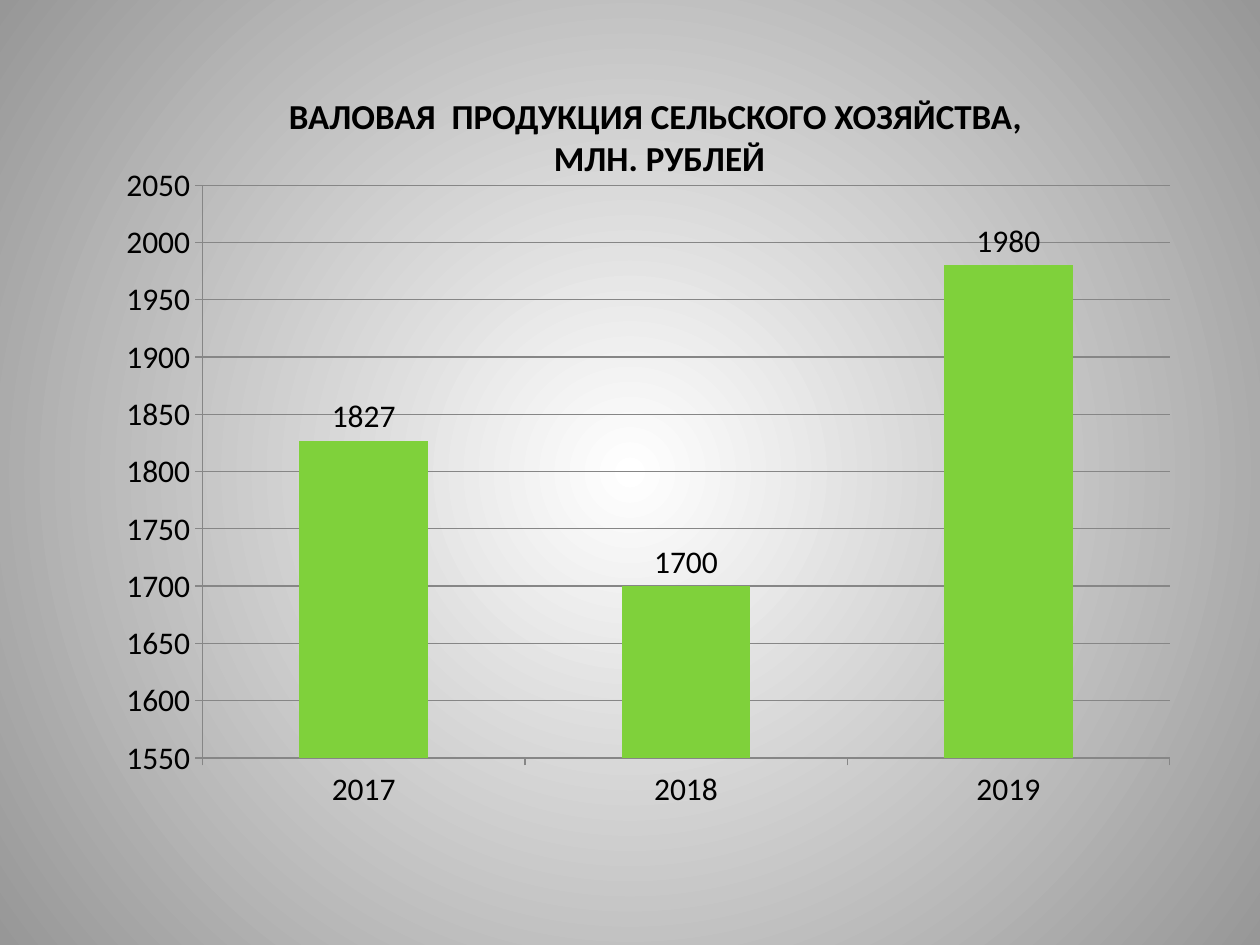
from dataclasses import dataclass

from lxml import etree
from pptx import Presentation
from pptx.chart.data import CategoryChartData
from pptx.dml.color import RGBColor
from pptx.enum.chart import XL_CHART_TYPE as ChartType
from pptx.enum.chart import XL_LABEL_POSITION as LabelPosition
from pptx.enum.chart import XL_TICK_MARK as TickMark
from pptx.enum.text import MSO_ANCHOR as Anchor
from pptx.enum.text import PP_ALIGN as Align
from pptx.oxml import parse_xml
from pptx.oxml.ns import nsdecls, qn
from pptx.util import Emu, Pt

PX_PER_INCH = 126
TITLE_LINES = ["ВАЛОВАЯ  ПРОДУКЦИЯ СЕЛЬСКОГО ХОЗЯЙСТВА, ", "МЛН. РУБЛЕЙ"]
OUTPUT_BY_YEAR = {"2017": 1827, "2018": 1700, "2019": 1980}


@dataclass(frozen=True)
class Theme:
    font: str = "Calibri"
    title_size: int = 20
    chart_size: int = 18
    text: str = "000000"
    bar: str = "7FD13B"
    grid: str = "868686"
    center: str = "FFFFFF"
    edge: str = "979797"


def px(length):
    return Emu(round(length * 914400 / PX_PER_INCH))


def set_attributes(target, values):
    for name, value in values.items():
        setattr(target, name, value)


class SlideBuilder:
    def __init__(self, slide, theme):
        self.slide = slide
        self.theme = theme

    def format_font(self, font, size, bold=False):
        set_attributes(font, {"name": self.theme.font, "size": Pt(size), "bold": bold})
        font.color.rgb = RGBColor.from_string(self.theme.text)

    def background(self):
        """Fill the background with a gradient spreading from the slide centre."""
        fill = self.slide.background.fill
        fill.gradient()
        for stop, color in zip(fill.gradient_stops, (self.theme.center, self.theme.edge)):
            stop.color.rgb = RGBColor.from_string(color)
        properties = self.slide.background._cSld.find(".//" + qn("a:gradFill"))
        linear = properties.find(qn("a:lin"))
        properties.replace(linear, parse_xml(
            f'<a:path {nsdecls("a")} path="circle">'
            '<a:fillToRect l="50000" t="50000" r="50000" b="50000"/></a:path>'))

    def column_chart(self, left, top, width, height, values, plot, scale):
        data = CategoryChartData()
        data.categories = list(values)
        data.add_series("Series 1", list(values.values()))
        frame = self.slide.shapes.add_chart(
            ChartType.COLUMN_CLUSTERED, *map(px, (left, top, width, height)), data)
        chart = frame.chart
        set_attributes(chart, {"has_legend": False, "has_title": False})
        self.format_font(chart.font, self.theme.chart_size)

        columns = chart.plots[0]
        set_attributes(columns, {"gap_width": 150, "vary_by_categories": False,
                                 "has_data_labels": True})
        set_attributes(columns.data_labels, {"show_value": True,
                                             "position": LabelPosition.OUTSIDE_END})
        bars = columns.series[0].format.fill
        bars.solid()
        bars.fore_color.rgb = RGBColor.from_string(self.theme.bar)

        value_axis, category_axis = chart.value_axis, chart.category_axis
        set_attributes(value_axis, {**scale, "has_major_gridlines": True})
        for axis in (value_axis, category_axis):
            axis.major_tick_mark = TickMark.OUTSIDE
        for part in (value_axis, category_axis, value_axis.major_gridlines):
            part.format.line.width = Pt(0.75)
            part.format.line.color.rgb = RGBColor.from_string(self.theme.grid)
        self.place_plot(chart, plot)

    def place_plot(self, chart, plot):
        """Fix the inner plot area as fractions of a chart without a frame."""
        space = chart._chartSpace
        area = space.find(".//" + qn("c:plotArea"))
        for old in area.findall(qn("c:layout")):
            area.remove(old)
        layout = parse_xml(f'<c:layout {nsdecls("c")}><c:manualLayout/></c:layout>')
        settings = {"layoutTarget": "inner", "xMode": "edge", "yMode": "edge", **plot}
        for name, value in settings.items():
            etree.SubElement(layout[0], qn(f"c:{name}")).set("val", str(value))
        area.insert(0, layout)
        space.find(qn("c:chart")).addnext(parse_xml(
            f'<c:spPr {nsdecls("c", "a")}><a:noFill/><a:ln><a:noFill/></a:ln></c:spPr>'))

    def title(self, left, top, width, height, lines):
        """Place the title in front of everything drawn so far."""
        shape = self.slide.shapes.title
        set_attributes(shape, {"left": px(left), "top": px(top),
                               "width": px(width), "height": px(height)})
        frame = shape.text_frame
        set_attributes(frame, {"word_wrap": True, "vertical_anchor": Anchor.TOP})
        frame.text = "\n".join(lines)
        for paragraph in frame.paragraphs:
            paragraph.alignment = Align.CENTER
            self.format_font(paragraph.runs[0].font, self.theme.title_size, bold=True)
        self.slide.shapes._spTree.append(shape._element)


def main():
    presentation = Presentation()
    set_attributes(presentation, {"slide_width": px(1260), "slide_height": px(945)})
    title_only = presentation.slide_layouts[5]
    builder = SlideBuilder(presentation.slides.add_slide(title_only), Theme())
    builder.background()
    builder.column_chart(
        59, 137, 1131, 709, OUTPUT_BY_YEAR,
        plot={"x": 0.127, "y": 0.068, "w": 0.855, "h": 0.808},
        scale={"minimum_scale": 1550, "maximum_scale": 2050, "major_unit": 50})
    builder.title(197, 88, 925, 97, TITLE_LINES)
    presentation.save("out.pptx")


if __name__ == "__main__":
    main()
